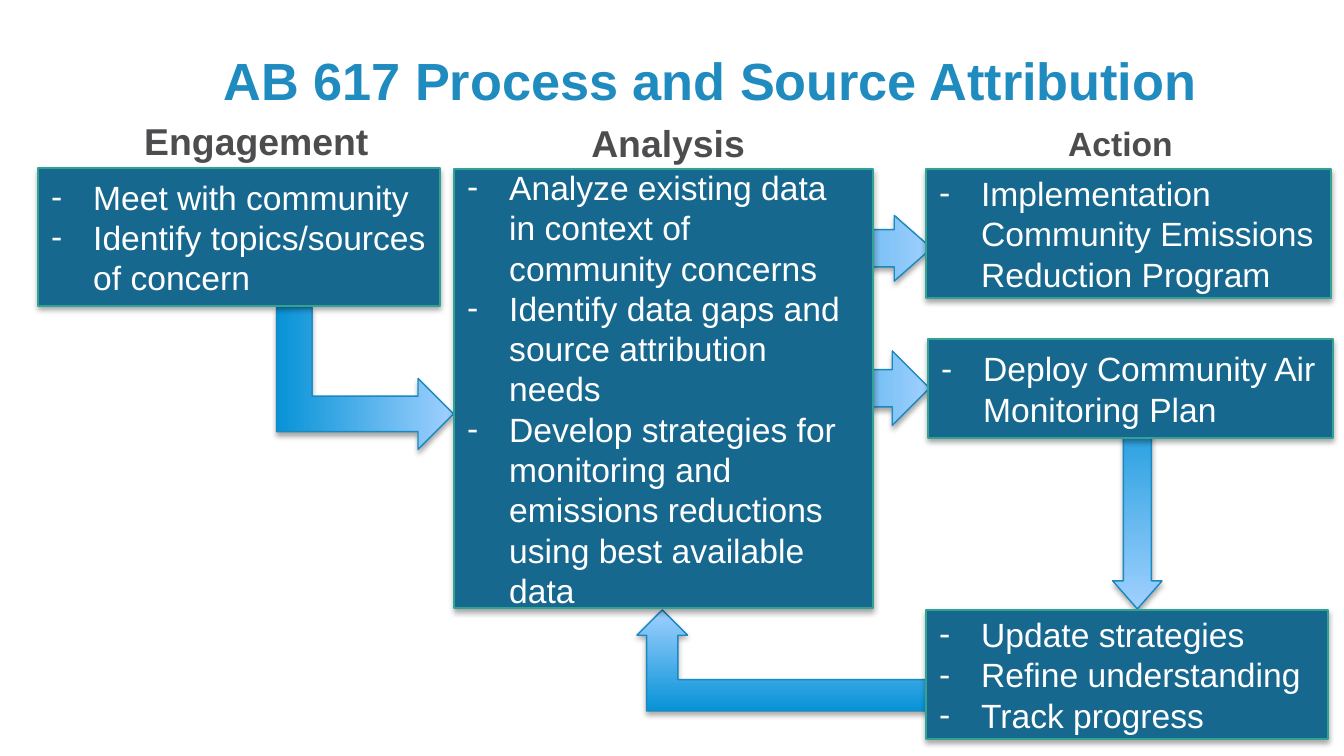
from lxml import etree
from pptx import Presentation
from pptx.dml.color import RGBColor
from pptx.enum.shapes import MSO_SHAPE
from pptx.enum.text import MSO_ANCHOR, MSO_AUTO_SIZE, PP_ALIGN
from pptx.oxml.ns import qn
from pptx.util import Emu, Pt

RECT = MSO_SHAPE.RECTANGLE
BENT = MSO_SHAPE.BENT_UP_ARROW
MIDDLE = MSO_ANCHOR.MIDDLE
TOP = MSO_ANCHOR.TOP
GROW = MSO_AUTO_SIZE.SHAPE_TO_FIT_TEXT
FIXED = MSO_AUTO_SIZE.NONE
LEFT, CENTER = PP_ALIGN.LEFT, PP_ALIGN.CENTER

WHITE = RGBColor(0xFF, 0xFF, 0xFF)
GRAY = RGBColor(0x4D, 0x4D, 0x4F)
BLUE = RGBColor(0x1F, 0x8B, 0xBF)
NAVY = RGBColor(0x17, 0x68, 0x8F)
TEAL = RGBColor(0x32, 0xA2, 0x92)
EDGE = RGBColor(0x1A, 0x89, 0xBF)
DARK = RGBColor(0x07, 0x93, 0xD7)
LIGHT = RGBColor(0xA0, 0xD0, 0xFF)

FONT = "Arial"
SCALE = 914400 / 134.4
INDENT = 42

# Place, turn in degrees, flip, adjustments
ARROWS = [
    ((758, 254, 149, 194), 90, None, (0.25, 0.25, 0.25)),
    ((1050, 382, 112, 227), 0, "flipV", (0.25, 0.22, 0.25)),
    ((637, 610, 359, 101), 0, "flipH", (0.31, 0.25, 0.25)),
    ((746, 179, 149, 222), 270, "flipV", (0.25, 0.22, 0.25)),
    ((294, 290, 142, 177), 90, None, (0.25, 0.25, 0.25)),
]

BOXES = [
    ((926, 169, 405, 129),
     ["Implementation Community Emissions Reduction Program"]),
    ((454, 169, 419, 439),
     ["Analyze existing data in context of community concerns",
      "Identify data gaps and source attribution needs",
      "Develop strategies for monitoring and emissions reductions "
      "using best available data"]),
    ((38, 168, 402, 138),
     ["Meet with community", "Identify topics/sources of concern"]),
    ((926, 610, 402, 129),
     ["Update strategies", "Refine understanding", "Track progress"]),
    ((928, 339, 405, 99), ["Deploy Community Air Monitoring Plan"]),
]

HEADS = [
    ((131, 112, 263, 59), "Engagement", 20),
    ((578, 114, 188, 59), "Analysis", 20),
    ((1055, 116, 152, 54), "Action", 18),
]


def px(n):
    return Emu(round(n * SCALE))


def shade(shape):
    """Give the shape a soft shadow straight below it."""
    shape.shadow.inherit = False
    effects = shape._element.spPr.find(qn("a:effectLst"))
    outer = etree.SubElement(
        effects, qn("a:outerShdw"), blurRad=str(Pt(3.1)),
        dist=str(Pt(1.8)), dir="5400000", rotWithShape="0")
    color = etree.SubElement(outer, qn("a:srgbClr"), val="000000")
    etree.SubElement(color, qn("a:alpha"), val="35000")


def add_form(slide, kind, place, edge):
    shape = slide.shapes.add_shape(kind, *map(px, place))
    shape.line.color.rgb = edge
    shape.line.width = Pt(0.75)
    shade(shape)
    return shape


def add_run(para, text, size, color, bold=False):
    run = para.add_run()
    run.text = text
    font = run.font
    font.name, font.size, font.bold = FONT, Pt(size), bold
    font.color.rgb = color


def add_dash(para):
    """Set a hanging indent with a dash as the bullet."""
    props = para._p.get_or_add_pPr()
    props.set("marL", str(px(INDENT)))
    props.set("indent", str(-px(INDENT)))
    etree.SubElement(props, qn("a:buFont"), typeface=FONT)
    etree.SubElement(props, qn("a:buChar"), char="-")


def add_arrow(slide, place, turn, flip, adjust):
    arrow = add_form(slide, BENT, place, EDGE)
    arrow.rotation = turn
    if flip:
        arrow._element.spPr.find(qn("a:xfrm")).set(flip, "1")
    for i, value in enumerate(adjust):
        arrow.adjustments[i] = value
    arrow.fill.gradient()
    arrow.fill.gradient_angle = 90
    for stop, color in zip(arrow.fill.gradient_stops, (DARK, LIGHT)):
        stop.color.rgb = color


def add_box(slide, place, items):
    box = add_form(slide, RECT, place, TEAL)
    box.fill.solid()
    box.fill.fore_color.rgb = NAVY
    frame = box.text_frame
    frame.word_wrap = True
    frame.vertical_anchor = MIDDLE
    for i, item in enumerate(items):
        para = frame.add_paragraph() if i else frame.paragraphs[0]
        para.alignment = LEFT
        add_dash(para)
        add_run(para, item, 18, WHITE)


def add_label(slide, place, text, size, color=GRAY, align=LEFT,
              anchor=TOP, fit=GROW):
    frame = slide.shapes.add_textbox(*map(px, place)).text_frame
    frame.word_wrap = True
    frame.auto_size = fit
    frame.vertical_anchor = anchor
    para = frame.paragraphs[0]
    para.alignment = align
    add_run(para, text, size, color, True)


def main():
    deck = Presentation()
    deck.slide_width, deck.slide_height = px(1344), px(756)
    slide = deck.slides.add_slide(deck.slide_layouts[6])
    for arrow in ARROWS:
        add_arrow(slide, *arrow)
    add_label(slide, (105, 17, 1210, 126),
              "AB 617 Process and Source Attribution", 28, BLUE,
              CENTER, MIDDLE, FIXED)
    for box in BOXES:
        add_box(slide, *box)
    for head in HEADS:
        add_label(slide, *head)
    deck.save("out.pptx")


if __name__ == "__main__":
    main()
